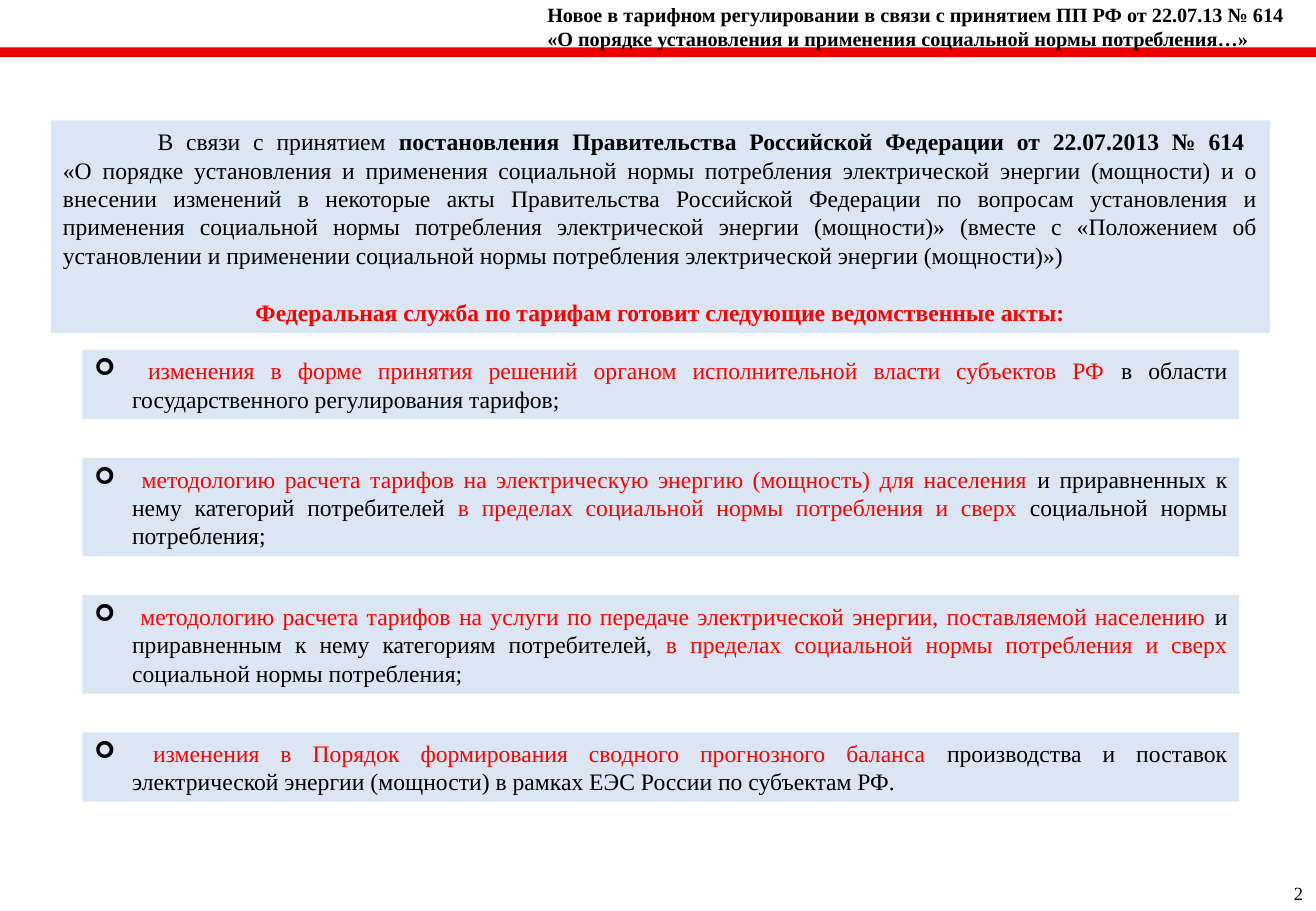
from lxml.etree import SubElement
from pptx import Presentation
from pptx.dml.color import RGBColor
from pptx.enum.shapes import MSO_SHAPE
from pptx.enum.text import MSO_ANCHOR, PP_ALIGN
from pptx.oxml.ns import qn
from pptx.util import Pt

PX = 9144  # 100 px to the inch
THEME = {
    "font": "Times New Roman",
    "text": RGBColor(0x00, 0x00, 0x00),
    "accent": RGBColor(0xFF, 0x00, 0x00),
    "bar": RGBColor(0xEB, 0x00, 0x00),
    "panel": RGBColor(0xDC, 0xE6, 0xF2),
    "header_size": 12,
    "body_size": 14,
    "number_size": 11,
}

presentation = Presentation()
presentation.slide_width = 1084 * PX
presentation.slide_height = 750 * PX
slide = presentation.slides.add_slide(presentation.slide_layouts[6])


def add_rectangle(left, top, width, height, color):
    shape = slide.shapes.add_shape(
        MSO_SHAPE.RECTANGLE, left * PX, top * PX, width * PX, height * PX)
    shape.shadow.inherit = False
    shape.fill.solid()
    shape.fill.fore_color.rgb = color
    shape.line.fill.background()
    shape.text_frame.word_wrap = True
    shape.text_frame.vertical_anchor = MSO_ANCHOR.MIDDLE
    return shape


def add_run(paragraph, text, size, color="text", bold=False):
    run = paragraph.add_run()
    run.text = text
    run.font.name = THEME["font"]
    run.font.size = Pt(THEME[size])
    run.font.color.rgb = THEME[color]
    run.font.bold = bold


# Header bar and title
add_rectangle(0, 39, 1084, 8, THEME["bar"])
header = slide.shapes.add_textbox(441 * PX, 0, 643 * PX, 44 * PX)
header.text_frame.word_wrap = True
header.text_frame.margin_top = 2 * PX
header_lines = [
    "Новое в тарифном регулировании в связи с принятием ПП РФ от 22.07.13 № 614",
    "«О порядке установления и применения социальной нормы потребления…»",
]
for index, line in enumerate(header_lines):
    paragraph = header.text_frame.add_paragraph() if index else header.text_frame.paragraphs[0]
    properties = paragraph._p.get_or_add_pPr()
    properties.set("marL", str(5 * PX))
    properties.set("indent", str(-5 * PX))
    add_run(paragraph, line, "header_size", bold=True)

# Introduction panel
introduction = add_rectangle(42, 99, 1004, 175, THEME["panel"])
paragraph = introduction.text_frame.paragraphs[0]
paragraph.alignment = PP_ALIGN.JUSTIFY
paragraph._p.get_or_add_pPr().set("indent", str(78 * PX))
add_run(paragraph, "В связи с принятием ", "body_size")
add_run(paragraph, "постановления Правительства Российской Федерации от 22.07.2013 № 614 ",
        "body_size", bold=True)
paragraph.add_line_break()
line_break = paragraph._p.find(qn("a:br"))
SubElement(line_break, qn("a:rPr"), sz=str(THEME["body_size"] * 100))
add_run(paragraph,
        "«О порядке установления и применения социальной нормы потребления электрической "
        "энергии (мощности) и о внесении изменений в некоторые акты Правительства Российской "
        "Федерации по вопросам установления и применения социальной нормы потребления "
        "электрической энергии (мощности)» (вместе с «Положением об установлении и применении "
        "социальной нормы потребления электрической энергии (мощности)»)",
        "body_size")

conclusion = introduction.text_frame.add_paragraph()
conclusion.alignment = PP_ALIGN.CENTER
conclusion.space_before = Pt(17)
add_run(conclusion, "Федеральная служба по тарифам готовит следующие ведомственные акты:",
        "body_size", "accent", True)

# Planned acts: height of the panel, then runs of text with their colours
acts = [
    (57, [
        (" изменения в форме принятия решений органом исполнительной власти субъектов РФ ", "accent"),
        ("в области государственного регулирования тарифов;", "text"),
    ]),
    (81, [
        (" методологию расчета тарифов на электрическую энергию (мощность) для населения ", "accent"),
        ("и приравненных к нему категорий потребителей ", "text"),
        ("в пределах социальной нормы потребления и сверх ", "accent"),
        ("социальной нормы потребления;", "text"),
    ]),
    (81, [
        (" методологию расчета тарифов на услуги по передаче электрической энергии, "
         "поставляемой населению", "accent"),
        (" и приравненным к нему категориям потребителей, ", "text"),
        ("в пределах социальной нормы потребления и сверх ", "accent"),
        ("социальной нормы потребления;", "text"),
    ]),
    (57, [
        (" изменения в Порядок формирования сводного прогнозного баланса ", "accent"),
        ("производства и поставок электрической энергии (мощности) в рамках ЕЭС России "
         "по субъектам РФ.", "text"),
    ]),
]
act_top, act_gap = 288, 32
for height, parts in acts:
    act = add_rectangle(68, act_top, 953, height, THEME["panel"])
    paragraph = act.text_frame.paragraphs[0]
    paragraph.alignment = PP_ALIGN.JUSTIFY
    properties = paragraph._p.get_or_add_pPr()
    properties.set("marL", str(31 * PX))
    properties.set("indent", str(-31 * PX))
    bullet_color = SubElement(properties, qn("a:buClr"))
    SubElement(bullet_color, qn("a:srgbClr"), val=str(THEME["text"]))
    SubElement(properties, qn("a:buFont"), typeface="Wingdings")
    SubElement(properties, qn("a:buChar"), char="➢")
    for text, color in parts:
        add_run(paragraph, text, "body_size", color)
    act_top += height + act_gap

# Slide number
number = slide.shapes.add_textbox(1056 * PX, 721 * PX, 28 * PX, 29 * PX)
number.text_frame.word_wrap = False
add_run(number.text_frame.paragraphs[0], "2", "number_size")

presentation.save("out.pptx")
